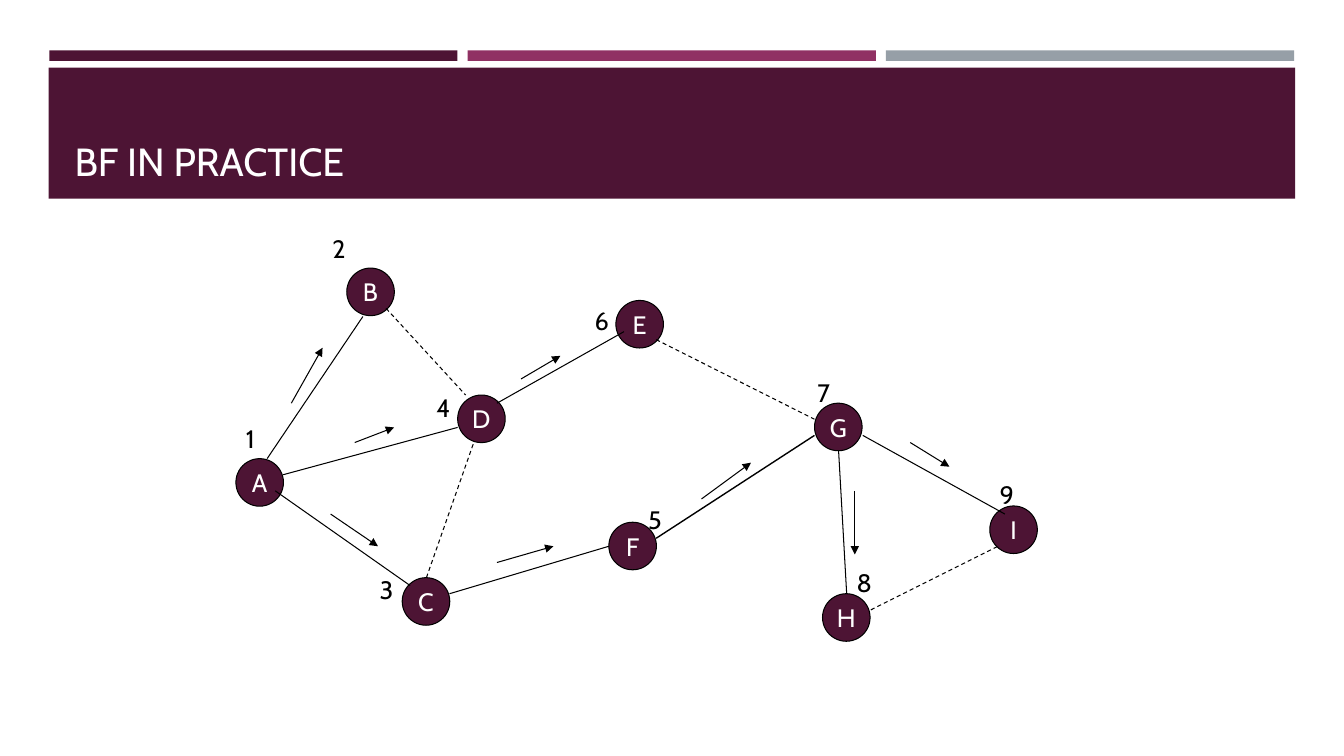
"""Build the slide that shows a breadth-first walk over a nine-node graph."""
from lxml import etree
from pptx import Presentation
from pptx.dml.color import RGBColor
from pptx.enum.dml import MSO_LINE
from pptx.enum.shapes import MSO_CONNECTOR, MSO_SHAPE
from pptx.enum.text import MSO_ANCHOR, MSO_AUTO_SIZE, PP_ALIGN
from pptx.oxml.ns import qn
from pptx.util import Pt

PLUM = RGBColor(0x4D, 0x14, 0x34)
MAGENTA = RGBColor(0x90, 0x31, 0x63)
GREY = RGBColor(0x96, 0x9F, 0xA7)
WHITE = RGBColor(0xFF, 0xFF, 0xFF)
BLACK = RGBColor(0x00, 0x00, 0x00)

RECTANGLE, ELLIPSE = MSO_SHAPE.RECTANGLE, MSO_SHAPE.OVAL
STRAIGHT, DASH = MSO_CONNECTOR.STRAIGHT, MSO_LINE.DASH
TOP, MIDDLE, BOTTOM = MSO_ANCHOR.TOP, MSO_ANCHOR.MIDDLE, MSO_ANCHOR.BOTTOM
LEFT, CENTER = PP_ALIGN.LEFT, PP_ALIGN.CENTER
NO_FIT, GROW = MSO_AUTO_SIZE.NONE, MSO_AUTO_SIZE.SHAPE_TO_FIT_TEXT

NODE_SIZE = 34
NODES = {
    "B": (247.7, 191.5), "I": (707, 361.4), "A": (168.5, 327.6),
    "C": (287.3, 412.6), "D": (326.9, 282.2), "H": (587.5, 424.1),
    "G": (581.8, 288), "F": (434.9, 373), "E": (439.9, 214.6),
}
VISIT_ORDER = {
    "1": (168.5, 298.8), "2": (230.4, 163.4), "3": (264.2, 406.8),
    "4": (304.6, 276.5), "5": (455.8, 356.4), "6": (417.6, 214.6),
    "7": (576.7, 265.7), "8": (604.8, 401.8), "9": (707, 339.1),
}
TREE_EDGES = {
    "AB": (190.8, 327.6, 259.2, 226.1), "AD": (202.3, 339.1, 326.9, 305.3),
    "AC": (196.6, 350.6, 293, 418.3), "DE": (355, 288, 445.7, 236.9),
    "CF": (321.1, 424.1, 434.9, 390.2), "FG": (468.7, 384.5, 581.8, 311),
    "GH": (599, 321.8, 604.8, 424.1), "GI": (616.3, 311, 717.8, 367.2),
}
UNUSED_EDGES = {
    "BD": (275.8, 220.3, 332.6, 282.2), "CD": (304.6, 412.6, 338.4, 316.1),
    "EG": (468.7, 242.6, 581.8, 299.5), "HI": (622.1, 435.6, 712.8, 390.2),
}
WALK_ARROWS = {
    "AB": (208.1, 288, 230.4, 248.4), "AC": (236.2, 367.2, 270, 390.2),
    "AD": (253.4, 316.1, 281.5, 305.3), "CF": (355, 401.8, 395.3, 390.2),
    "DE": (372.2, 270.7, 400.3, 254.2), "FG": (501.1, 356.4, 536.4, 330.5),
    "GH": (610.6, 350.6, 610.6, 396), "GI": (650.2, 316.1, 678.2, 333.4),
}


def write_text(frame, text, *, font="Cabin", size=18, color=BLACK, align=LEFT,
               anchor=TOP, wrap=False, fit=NO_FIT):
    frame.word_wrap = wrap
    frame.auto_size = fit
    frame.vertical_anchor = anchor
    paragraph = frame.paragraphs[0]
    paragraph.alignment = align
    run = paragraph.add_run()
    run.text = text
    run.font.name = font
    run.font.size = Pt(size)
    run.font.color.rgb = color


class GraphSlide:
    def __init__(self, presentation, line_width=0.75):
        self.slide = presentation.slides.add_slide(presentation.slide_layouts[5])
        self.shapes = self.slide.shapes
        self.line_width = line_width

    def filled(self, kind, left, top, width, height, color):
        shape = self.shapes.add_shape(kind, Pt(left), Pt(top), Pt(width), Pt(height))
        shape.shadow.inherit = False
        shape.fill.solid()
        shape.fill.fore_color.rgb = color
        shape.line.fill.background()
        return shape

    def title(self, text, left, top, width, height):
        heading = self.shapes.title
        heading.left, heading.top = Pt(left), Pt(top)
        heading.width, heading.height = Pt(width), Pt(height)
        write_text(heading.text_frame, text, size=28, color=WHITE,
                   anchor=BOTTOM, wrap=True)
        heading.element.getparent().append(heading.element)

    def node(self, letter, left, top):
        circle = self.filled(ELLIPSE, left, top, NODE_SIZE, NODE_SIZE, PLUM)
        circle.line.color.rgb = BLACK
        circle.line.width = Pt(self.line_width)
        write_text(circle.text_frame, letter, color=WHITE, align=CENTER, anchor=MIDDLE)

    def edge(self, ends, width=None, dash=None, arrow=False):
        link = self.shapes.add_connector(STRAIGHT, *(Pt(value) for value in ends))
        link.line.color.rgb = BLACK
        link.line.width = Pt(width or self.line_width)
        if dash:
            link.line.dash_style = dash
        if arrow:
            etree.SubElement(link.line._get_or_add_ln(), qn("a:tailEnd"), type="triangle")
        etree.SubElement(link.element.spPr, qn("a:effectLst"))

    def label(self, text, left, top):
        box = self.shapes.add_textbox(Pt(left), Pt(top), Pt(24.5), Pt(28.8))
        write_text(box.text_frame, text, fit=GROW)


def main():
    presentation = Presentation()
    presentation.slide_width, presentation.slide_height = Pt(960), Pt(540)
    page = GraphSlide(presentation)

    for column, color in enumerate((PLUM, MAGENTA, GREY)):
        page.filled(RECTANGLE, 35.2 + 298.8 * column, 36, 291.6, 7.5, color)
    page.filled(RECTANGLE, 34.8, 48.4, 890.4, 93.6, PLUM)
    page.title("BF IN PRACTICE", 46.1, 55.4, 868.3, 79.9)

    for letter, place in NODES.items():
        page.node(letter, *place)
    for pair, ends in TREE_EDGES.items():
        page.edge(ends, width=1 if pair == "FG" else None)
    for ends in UNUSED_EDGES.values():
        page.edge(ends, dash=DASH)
    for ends in WALK_ARROWS.values():
        page.edge(ends, arrow=True)
    for number, place in VISIT_ORDER.items():
        page.label(number, *place)

    presentation.save("out.pptx")


if __name__ == "__main__":
    main()
